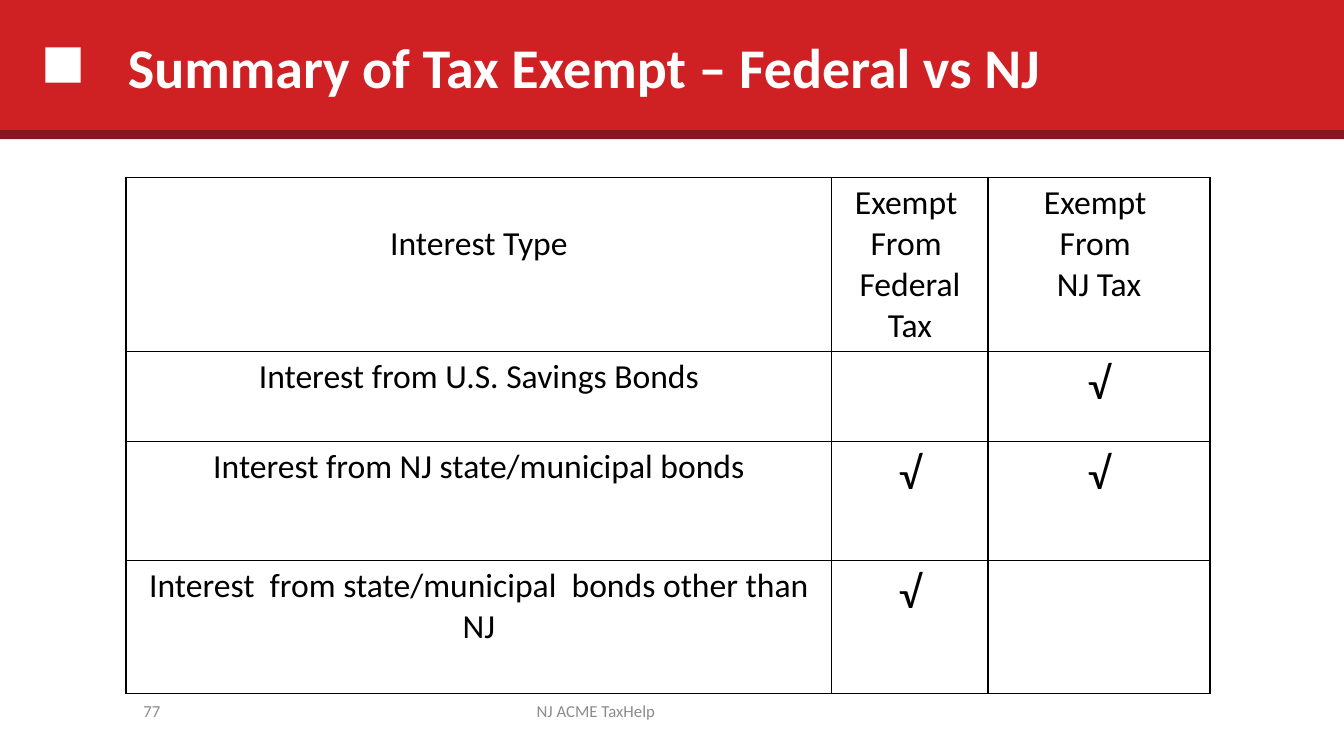
from lxml import etree
from pptx import Presentation
from pptx.dml.color import RGBColor
from pptx.enum.shapes import MSO_SHAPE
from pptx.enum.text import MSO_ANCHOR, PP_ALIGN
from pptx.oxml.ns import qn
from pptx.util import Inches, Pt

RECTANGLE = MSO_SHAPE.RECTANGLE
MIDDLE = MSO_ANCHOR.MIDDLE
LEFT, CENTER, RIGHT = PP_ALIGN.LEFT, PP_ALIGN.CENTER, PP_ALIGN.RIGHT

FONT = "Calibri"
COLORS = {
    "red": "CF2124",
    "maroon": "841721",
    "white": "FFFFFF",
    "black": "000000",
    "gray": "8C8C8C",
}
CHECK = "√"
TEXT_SIZE, CHECK_SIZE = 24, 32
COLUMN_WIDTHS = [7, 1.55, 2.2]
ROW_HEIGHTS = [1.73, 0.89, 1.18, 1.32]
ROWS = [
    ["Interest Type", "Exempt \nFrom \nFederal Tax", "Exempt \nFrom \nNJ Tax"],
    ["Interest from U.S. Savings Bonds", "", CHECK],
    ["Interest from NJ state/municipal bonds", CHECK, CHECK],
    ["Interest  from state/municipal  bonds other than NJ", CHECK, ""],
]


class SlideBuilder:
    def __init__(self, page):
        self.page = page

    def color(self, name):
        return RGBColor.from_string(COLORS[name])

    def style(self, frame, size, color, align, bold=False):
        for para in frame.paragraphs:
            para.alignment = align
            para.font.name = FONT
            para.font.size = Pt(size)
            para.font.bold = bold
            para.font.color.rgb = self.color(color)

    def block(self, left, top, width, height, color):
        box = self.page.shapes.add_shape(
            RECTANGLE, Inches(left), Inches(top), Inches(width), Inches(height))
        box.shadow.inherit = False
        box.fill.solid()
        box.fill.fore_color.rgb = self.color(color)
        box.line.fill.background()

    def text(self, left, top, width, height, words, size, color, align, bold=False):
        box = self.page.shapes.add_textbox(
            Inches(left), Inches(top), Inches(width), Inches(height))
        frame = box.text_frame
        frame.word_wrap = True
        frame.vertical_anchor = MIDDLE
        frame.text = words
        self.style(frame, size, color, align, bold)

    def border(self, cell):
        properties = cell._tc.get_or_add_tcPr()
        for index, side in enumerate(("lnL", "lnR", "lnT", "lnB")):
            line = etree.Element(qn(f"a:{side}"), w=str(Pt(1)))
            fill = etree.SubElement(line, qn("a:solidFill"))
            etree.SubElement(fill, qn("a:srgbClr"), val=COLORS["black"])
            properties.insert(index, line)

    def table(self, left, top, widths, heights, rows):
        grid = self.page.shapes.add_table(
            len(rows), len(widths), Inches(left), Inches(top),
            Inches(sum(widths)), Inches(sum(heights))).table
        for column, width in zip(grid.columns, widths):
            column.width = Inches(width)
        for row, height, words in zip(grid.rows, heights, rows):
            row.height = Inches(height)
            for cell, content in zip(row.cells, words):
                cell.text = content
                size = CHECK_SIZE if content == CHECK else TEXT_SIZE
                self.style(cell.text_frame, size, "black", CENTER)
                cell.fill.background()
                self.border(cell)
        return grid


def main():
    deck = Presentation()
    deck.slide_width, deck.slide_height = Inches(13.33), Inches(7.5)
    page = deck.slides.add_slide(deck.slide_layouts[6])
    builder = SlideBuilder(page)

    builder.block(0, -0.01, 13.33, 1.33, "red")
    builder.block(0.45, 0.47, 0.35, 0.35, "white")
    builder.block(0, 1.29, 13.33, 0.09, "maroon")
    builder.text(3.8, 6.85, 4.22, 0.4, "NJ ACME TaxHelp", 12, "gray", CENTER)
    builder.text(0.67, 6.85, 1.02, 0.4, "77", 12, "gray", RIGHT)
    builder.text(1.17, 0.03, 10.66, 1.25, "Summary of Tax Exempt – Federal vs NJ",
                 40, "white", LEFT, bold=True)

    grid = builder.table(1.25, 1.76, COLUMN_WIDTHS, ROW_HEIGHTS, ROWS)
    grid.cell(0, 0).margin_top = Inches(0.46)
    deck.save("out.pptx")


if __name__ == "__main__":
    main()
